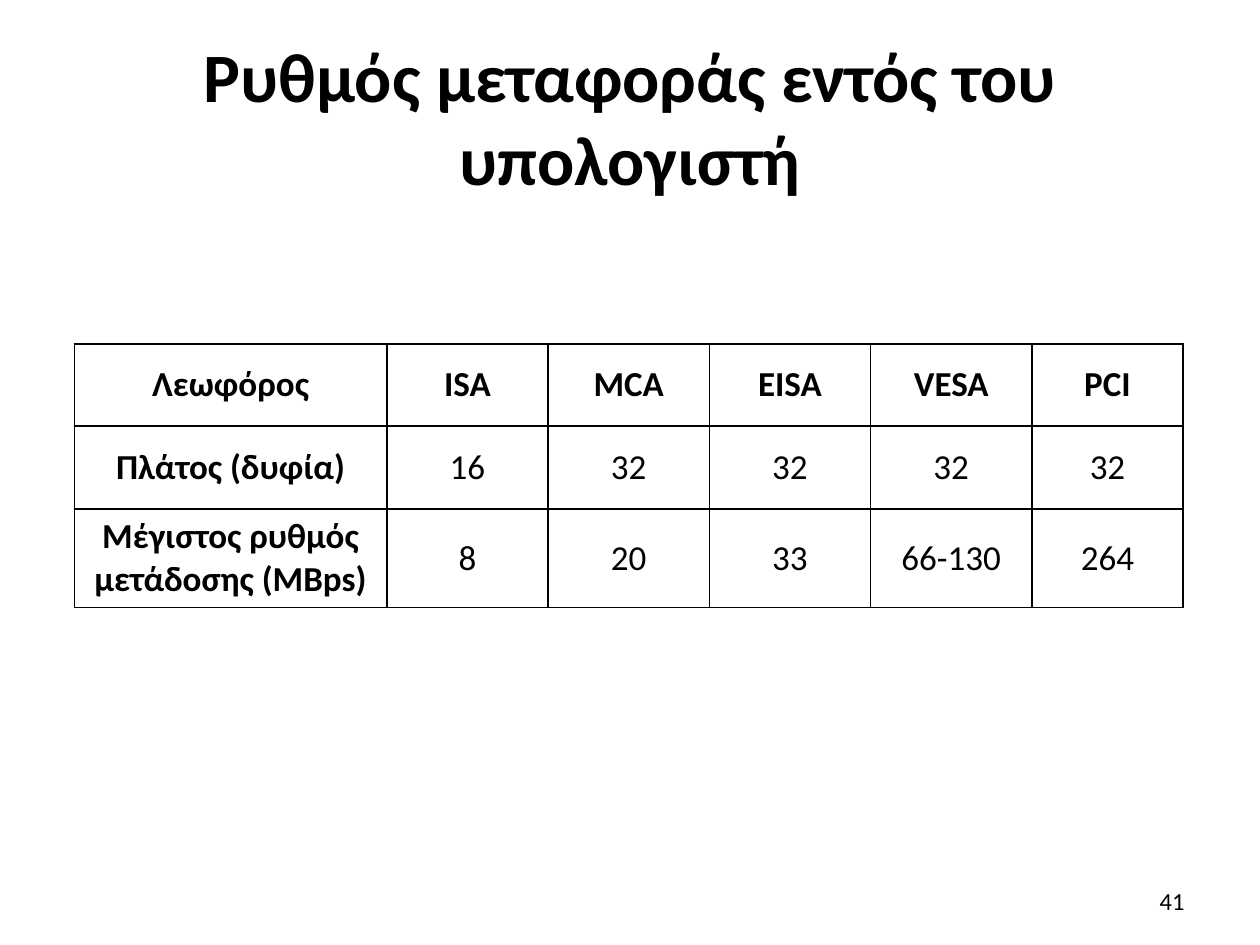
"""Build a slide with a table of bus transfer rates."""
from dataclasses import dataclass

from lxml import etree
from pptx import Presentation
from pptx.dml.color import RGBColor
from pptx.enum.text import MSO_ANCHOR, PP_ALIGN
from pptx.oxml.ns import qn
from pptx.slide import Slide
from pptx.table import _Cell
from pptx.text.text import TextFrame
from pptx.util import Inches, Pt

MIDDLE = MSO_ANCHOR.MIDDLE
CENTER, RIGHT = PP_ALIGN.CENTER, PP_ALIGN.RIGHT
COLORS = {"ink": "000000", "paper": "FFFFFF"}
FONT = "Calibri"
WIDTH, HEIGHT = Inches(10), Inches(7.5)
TABLE_LEFT, TABLE_TOP = 0.59, 2.73
COLUMN_WIDTHS = [2.48] + [1.28] * 4 + [1.2]
ROW_HEIGHTS = [0.65, 0.66, 0.78]
ROWS = [
    ["Λεωφόρος", "ISA", "MCA", "EISA", "VESA", "PCI"],
    ["Πλάτος (δυφία)", "16", "32", "32", "32", "32"],
    ["Μέγιστος ρυθμός μετάδοσης (MBps)", "8", "20", "33", "66-130", "264"],
]


@dataclass(frozen=True)
class TextStyle:
    size: float
    bold: bool = False
    align: PP_ALIGN = CENTER


@dataclass(frozen=True)
class Label:
    text: str
    left: float
    top: float
    width: float
    height: float
    style: TextStyle


LABELS = [
    Label("Ρυθμός μεταφοράς εντός του υπολογιστή", 0.05, 0.04, 0.9, 1 / 6,
          TextStyle(39.6, bold=True)),
    Label("41", 0.717, 0.927, 0.233, 0.053, TextStyle(14, align=RIGHT)),
]


def write_text(frame: TextFrame, text: str, style: TextStyle) -> None:
    frame.text = text
    frame.word_wrap = True
    paragraph = frame.paragraphs[0]
    paragraph.alignment = style.align
    for span in paragraph.runs:
        span.font.name = FONT
        span.font.size = Pt(style.size)
        span.font.bold = style.bold
        span.font.color.rgb = RGBColor.from_string(COLORS["ink"])


def add_label(page: Slide, label: Label) -> None:
    box = page.shapes.add_textbox(
        round(label.left * WIDTH), round(label.top * HEIGHT),
        round(label.width * WIDTH), round(label.height * HEIGHT))
    box.text_frame.vertical_anchor = MIDDLE
    write_text(box.text_frame, label.text, label.style)


def add_borders(cell: _Cell) -> None:
    properties = cell._tc.get_or_add_tcPr()
    for side in ("a:lnL", "a:lnR", "a:lnT", "a:lnB"):
        line = etree.SubElement(properties, qn(side), w=str(Pt(1)))
        fill = etree.SubElement(line, qn("a:solidFill"))
        etree.SubElement(fill, qn("a:srgbClr"), val=COLORS["ink"])


def add_rate_table(page: Slide) -> None:
    table = page.shapes.add_table(
        len(ROWS), len(COLUMN_WIDTHS), Inches(TABLE_LEFT), Inches(TABLE_TOP),
        Inches(sum(COLUMN_WIDTHS)), Inches(sum(ROW_HEIGHTS))).table
    table.horz_banding = False
    for column, width in zip(table.columns, COLUMN_WIDTHS):
        column.width = Inches(width)
    for row, height in zip(table.rows, ROW_HEIGHTS):
        row.height = Inches(height)
    for row_index, values in enumerate(ROWS):
        for column_index, value in enumerate(values):
            cell = table.cell(row_index, column_index)
            is_header = row_index == 0 or column_index == 0
            write_text(cell.text_frame, value, TextStyle(20, bold=is_header))
            cell.vertical_anchor = MIDDLE
            add_borders(cell)
            cell.fill.solid()
            cell.fill.fore_color.rgb = RGBColor.from_string(COLORS["paper"])


def main() -> None:
    deck = Presentation()
    deck.slide_width, deck.slide_height = WIDTH, HEIGHT
    page = deck.slides.add_slide(deck.slide_layouts[6])
    for label in LABELS:
        add_label(page, label)
    add_rate_table(page)
    deck.save("out.pptx")


if __name__ == "__main__":
    main()
